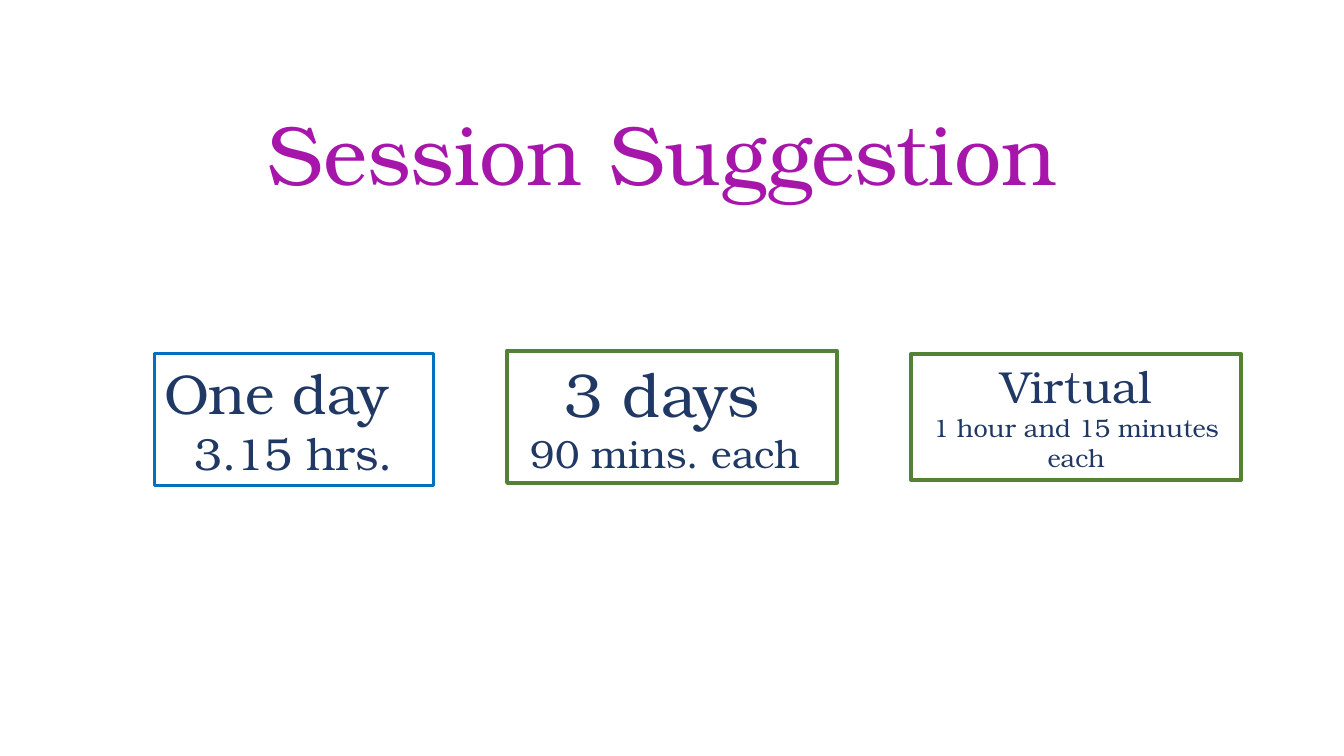
from pptx import Presentation
from pptx.dml.color import RGBColor
from pptx.enum.shapes import MSO_SHAPE
from pptx.enum.text import MSO_ANCHOR, PP_ALIGN
from pptx.util import Inches, Pt

RECTANGLE = MSO_SHAPE.RECTANGLE
TOP = MSO_ANCHOR.TOP
LEFT, CENTER = PP_ALIGN.LEFT, PP_ALIGN.CENTER
FONT = "TeX Gyre Bonum"
PURPLE, NAVY, BLUE, GREEN = "A616AB", "203864", "0070C0", "548235"

deck = Presentation()
deck.slide_width, deck.slide_height = Inches(13.33), Inches(7.5)
slide = deck.slides.add_slide(deck.slide_layouts[6])


def area(left, top, width, height):
    """Turn percentages of the slide's size into lengths."""
    across, down = deck.slide_width / 100, deck.slide_height / 100
    return int(left * across), int(top * down), int(width * across), int(height * down)


def write(shape, lines, color):
    """Fill a shape with lines given as (text, size, alignment)."""
    frame = shape.text_frame
    frame.word_wrap = True
    frame.vertical_anchor = TOP
    frame.text = "\n".join(text for text, _, _ in lines)
    for paragraph, (_, size, alignment) in zip(frame.paragraphs, lines):
        paragraph.alignment = alignment
        font = paragraph.runs[0].font
        font.name, font.size = FONT, Pt(size)
        font.color.rgb = RGBColor.from_string(color)


heading = slide.shapes.add_textbox(*area(13.2, 12.8, 72.15, 14.8))
write(heading, [("Session Suggestion", 60, CENTER)], PURPLE)

# Percent of the slide: left, top, width, height; then border and lines
sessions = [
    ((11.48, 46.8, 20.78, 17.47), BLUE, 2.25,
     [("One day", 40, LEFT), ("3.15 hrs.", 32, CENTER)]),
    ((37.73, 46.4, 24.53, 17.47), GREEN, 3,
     [("3 days ", 44, CENTER), ("90 mins. each ", 28, CENTER)]),
    ((67.8, 46.8, 24.53, 16.67), GREEN, 3,
     [("Virtual", 32, CENTER), ("1 hour and 15 minutes each", 18, CENTER)]),
]
for place, border, weight, lines in sessions:
    session = slide.shapes.add_shape(RECTANGLE, *area(*place))
    session.shadow.inherit = False
    session.fill.background()
    session.line.color.rgb = RGBColor.from_string(border)
    session.line.width = Pt(weight)
    write(session, lines, NAVY)

deck.save("out.pptx")
